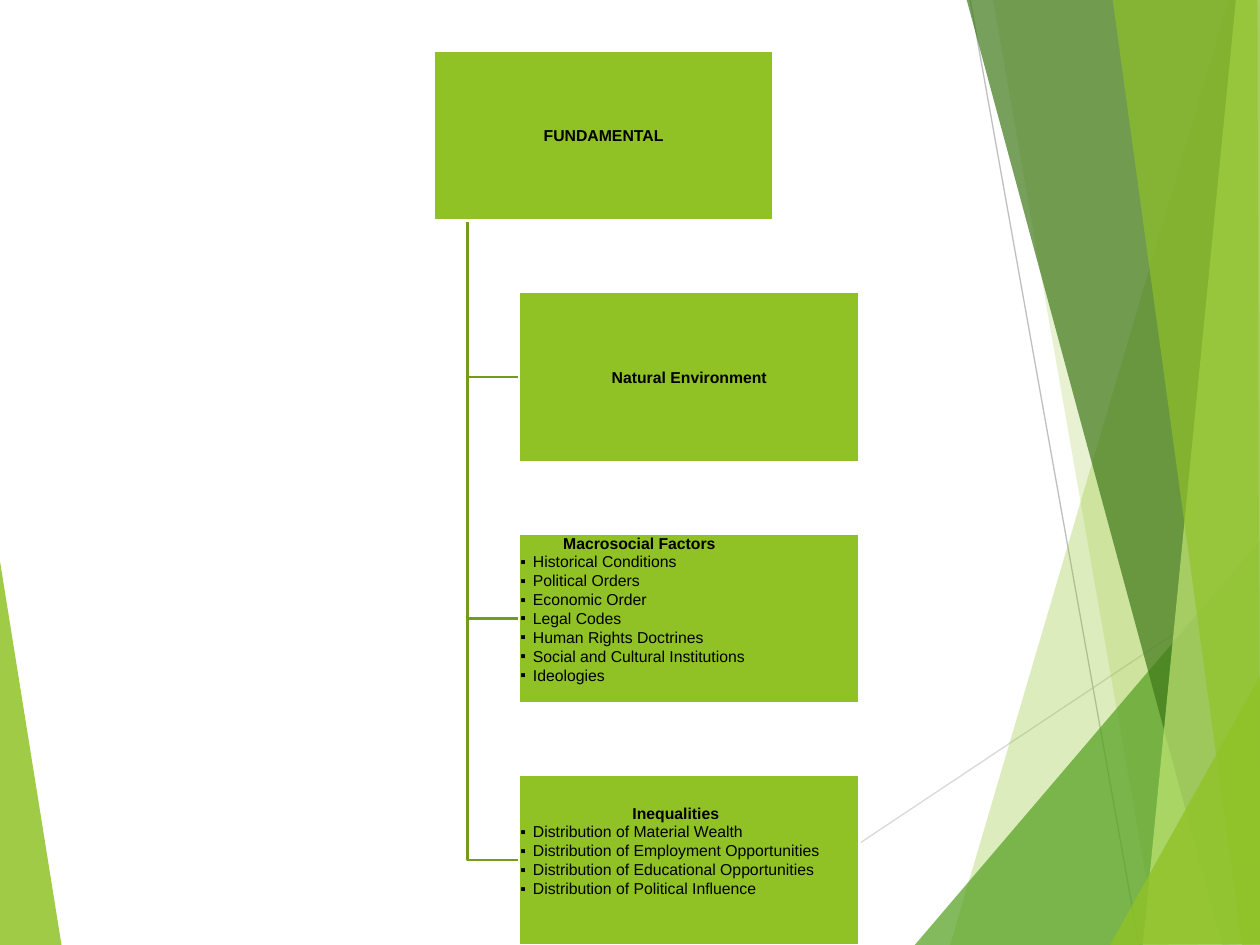
from lxml import etree
from pptx import Presentation
from pptx import util as u
from pptx.dml.color import RGBColor
from pptx.enum import shapes, text
from pptx.oxml import ns

GREEN, TRUNK, WHITE, BLACK = "90C226", "739B1E", "FFFFFF", "000000"
LEFT_WEDGE = ([(-0.01, 4.39), (0.49, 7.51), (-0.01, 7.5)], GREEN, 85)
RAYS = [
    ((5.61, 7.5), (10.01, 4.57), "D9D9D9"),
    ((7.7, 0), (9.04, 7.5), "BFBFBF"),
]
RIGHT_FACETS = [
    ([(9.75, 0), (7.54, 7.5), (10.02, 7.51), (10.01, 0.01)], GREEN, 30),
    ([(7.88, -0.01), (9.19, 7.5), (10.01, 7.5), (10.01, -0.01)], GREEN, 20),
    ([(7.26, 7.5), (10, 4.29), (10.01, 7.5)], "54A021", 72),
    ([(7.67, -0.01), (9.7, 7.5), (10.01, 7.49), (10.01, -0.01)], "3F7819", 70),
    ([(9.81, -0.01), (9.07, 7.5), (10.01, 7.5), (10, -0.01)], "C0E474", 70),
    ([(8.83, -0.01), (9.86, 7.5), (10, 7.5), (9.98, -0.01)], GREEN, 65),
    ([(8.81, 7.5), (10.01, 5.35), (10.01, 7.49)], GREEN, 80),
]
ROOT = {"heading": "FUNDAMENTAL"}
CHILDREN = [
    {"heading": "Natural Environment"},
    {
        "heading": "Macrosocial Factors",
        "indent": 0.34,
        "items": [
            "Historical Conditions", "Political Orders", "Economic Order",
            "Legal Codes", "Human Rights Doctrines",
            "Social and Cultural Institutions", "Ideologies",
        ],
    },
    {
        "heading": "Inequalities",
        "indent": 0.89,
        "items": [
            "Distribution of Material Wealth",
            "Distribution of Employment Opportunities",
            "Distribution of Educational Opportunities",
            "Distribution of Political Influence",
        ],
    },
]
ROOT_LEFT, CHILD_LEFT, TOP, PITCH = 3.44, 4.12, 0.4, 1.917
BOX_WIDTH, BOX_HEIGHT, TRUNK_X = 2.7, 1.35, 3.71
INSET, LINE_HEIGHT, BULLET_INDENT = 0.01, 0.15, 0.1


def color(value):
    return RGBColor.from_string(value)


def set_line(shape, value, width):
    shape.line.color.rgb = color(value)
    shape.line.width = u.Pt(width)


def add_outline(page, points, closed):
    corners = [(u.Inches(x), u.Inches(y)) for x, y in points]
    builder = page.shapes.build_freeform(*corners[0], scale=1.0)
    builder.add_line_segments(corners[1:], close=closed)
    shape = builder.convert_to_shape()
    shape.shadow.inherit = False
    return shape


def add_facet(page, points, fill, opacity):
    shape = add_outline(page, points, True)
    shape.fill.solid()
    shape.fill.fore_color.rgb = color(fill)
    shape.line.fill.background()
    tint = shape.fill._xPr.find(".//" + ns.qn("a:srgbClr"))
    etree.SubElement(tint, ns.qn("a:alpha"), val=str(opacity * 1000))


def add_ray(page, start, end, value):
    ends = [u.Inches(n) for n in start + end]
    ray = page.shapes.add_connector(shapes.MSO_CONNECTOR.STRAIGHT, *ends)
    set_line(ray, value, 0.75)
    etree.SubElement(ray._element.spPr, ns.qn("a:effectLst"))


def add_span(para, words, bold):
    span = para.add_run()
    span.text = words
    style = {"name": "Arial", "size": u.Pt(9), "bold": bold}
    for key, value in style.items():
        setattr(span.font, key, value)
    span.font.color.rgb = color(BLACK)


def set_indent(para, left, hanging=0):
    props = para._p.get_or_add_pPr()
    props.set("marL", str(u.Inches(left)))
    props.set("indent", str(-u.Inches(hanging)))
    return props


def add_box(page, node, left, top):
    items = node.get("items", [])
    area = [u.Inches(n) for n in (left, top, BOX_WIDTH, BOX_HEIGHT)]
    box = page.shapes.add_shape(shapes.MSO_SHAPE.RECTANGLE, *area)
    box.shadow.inherit = False
    box.fill.solid()
    box.fill.fore_color.rgb = color(GREEN)
    set_line(box, WHITE, 1.5)
    frame = box.text_frame
    layout = {
        "word_wrap": True,
        "vertical_anchor": text.MSO_ANCHOR.MIDDLE,
        "margin_left": u.Inches(INSET),
        "margin_right": u.Inches(INSET),
        "margin_top": u.Inches(INSET),
        "margin_bottom": u.Inches(INSET + (LINE_HEIGHT if items else 0)),
    }
    for key, value in layout.items():
        setattr(frame, key, value)
    para = frame.paragraphs[0]
    para.alignment = text.PP_ALIGN.LEFT if items else text.PP_ALIGN.CENTER
    set_indent(para, node.get("indent", 0))
    add_span(para, node["heading"], True)
    for item in items:
        para = frame.add_paragraph()
        para.alignment = text.PP_ALIGN.LEFT
        props = set_indent(para, BULLET_INDENT, BULLET_INDENT)
        etree.SubElement(props, ns.qn("a:buFont"), typeface="Arial")
        etree.SubElement(props, ns.qn("a:buChar"), char="▪")
        add_span(para, item, False)


def main():
    deck = Presentation()
    deck.slide_width, deck.slide_height = u.Inches(10), u.Inches(7.5)
    page = deck.slides.add_slide(deck.slide_layouts[6])
    add_facet(page, *LEFT_WEDGE)
    for ray in RAYS:
        add_ray(page, *ray)
    for facet in RIGHT_FACETS:
        add_facet(page, *facet)

    tops = [TOP + PITCH * row for row in range(1, len(CHILDREN) + 1)]
    for top in reversed(tops):
        middle = top + BOX_HEIGHT / 2
        points = [(TRUNK_X, TOP + BOX_HEIGHT), (TRUNK_X, middle), (CHILD_LEFT, middle)]
        branch = add_outline(page, points, False)
        branch.fill.background()
        set_line(branch, TRUNK, 1.5)
    add_box(page, ROOT, ROOT_LEFT, TOP)
    for node, top in zip(CHILDREN, tops):
        add_box(page, node, CHILD_LEFT, top)
    deck.save("out.pptx")


if __name__ == "__main__":
    main()
